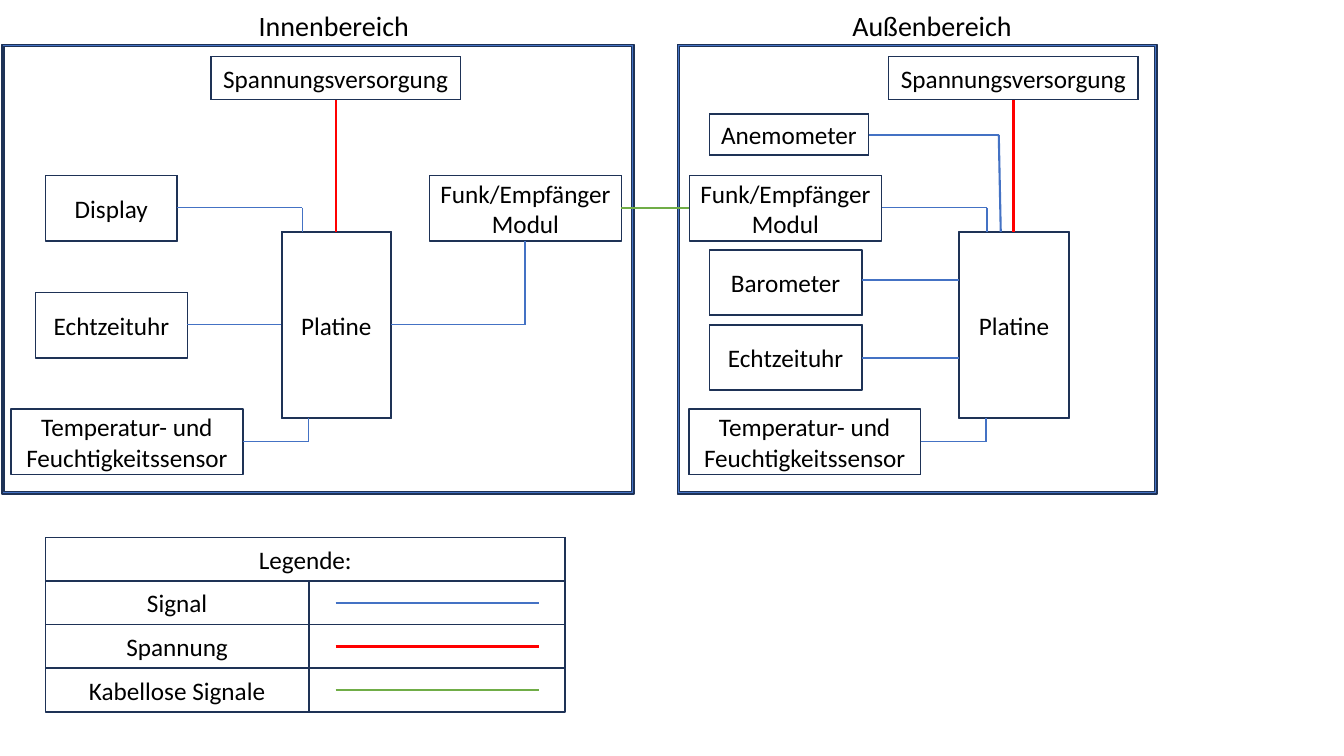
from pptx import Presentation
from pptx.dml.color import RGBColor
from pptx.enum.shapes import MSO_CONNECTOR, MSO_SHAPE
from pptx.enum.text import MSO_ANCHOR, PP_ALIGN
from pptx.oxml.ns import qn
from pptx.util import Cm, Pt
from lxml.etree import SubElement

COLORS = {"signal": "4472C4", "power": "FF0000", "radio": "70AD47",
          "edge": "1E3256", "text": "000000"}


class Board:
    """Holds the style and the current slide."""
    font = "Calibri"

    def __init__(self, slide):
        self.shapes = slide.shapes

    def color(self, name):
        return RGBColor.from_string(COLORS[name])

    def label(self, frame, text, size, align):
        frame.text = text
        for para in frame.paragraphs:
            para.alignment = align
            para.font.name = self.font
            para.font.size = Pt(size)
            para.font.color.rgb = self.color("text")

    def box(self, x, y, w, h, text=""):
        shape = self.shapes.add_shape(MSO_SHAPE.FRAME, Cm(x), Cm(y), Cm(w), Cm(h))
        shape.adjustments[0] = 0.005
        shape.shadow.inherit = False
        shape.fill.solid()
        shape.fill.fore_color.rgb = self.color("signal")
        shape.line.color.rgb = self.color("edge")
        shape.line.width = Pt(1)
        if text:
            shape.text_frame.vertical_anchor = MSO_ANCHOR.MIDDLE
            self.label(shape.text_frame, text, 18, PP_ALIGN.CENTER)

    def wire(self, points, kind="signal", width=1):
        for (x1, y1), (x2, y2) in zip(points, points[1:]):
            line = self.shapes.add_connector(
                MSO_CONNECTOR.STRAIGHT, Cm(x1), Cm(y1), Cm(x2), Cm(y2))
            line.line.color.rgb = self.color(kind)
            line.line.width = Pt(width)
            SubElement(line._element.spPr, qn("a:effectLst"))

    def head(self, x, w, text):
        frame = self.shapes.add_textbox(Cm(x), Cm(0.08), Cm(w), Cm(1.12)).text_frame
        frame.word_wrap = True
        self.label(frame, text, 20, PP_ALIGN.LEFT)


def main():
    prs = Presentation()
    prs.slide_width, prs.slide_height = Cm(33.87), Cm(19.05)
    board = Board(prs.slides.add_slide(prs.slide_layouts[6]))

    # Areas with the parts that both share
    areas = [(0, 0.05, 15.93, 6.27, 4.37, "Innenbereich"),
             (17.08, 17.07, 12.09, 21.23, 4.57, "Außenbereich")]
    for dx, left, width, x, w, title in areas:
        board.box(left, 1.12, width, 11.33)
        board.head(x, w, title)
        board.box(dx + 7.09, 5.84, 2.77, 4.7, "Platine")
        board.box(dx + 0.28, 10.31, 5.84, 1.65, "Temperatur- und Feuchtigkeitssensor")
        board.box(dx + 5.31, 1.42, 6.3, 1.09, "Spannungsversorgung")
        board.wire([(dx + 6.12, 11.13), (dx + 7.77, 11.13), (dx + 7.77, 10.54)])
        board.wire([(dx + 8.46, 2.51), (dx + 8.46, 5.84)], "power", 1.5)

    # Modules of each area
    modules = [
        (1.14, 4.42, 3.33, 1.65, "Display"),
        (0.89, 7.37, 3.84, 1.65, "Echtzeituhr"),
        (10.82, 4.42, 4.85, 1.65, "Funk/Empfänger\nModul"),
        (17.37, 4.42, 4.85, 1.65, "Funk/Empfänger\nModul"),
        (17.88, 2.87, 4.01, 1.04, "Anemometer"),
        (17.88, 6.3, 3.84, 1.65, "Barometer"),
        (17.88, 8.18, 3.84, 1.65, "Echtzeituhr"),
    ]
    for module in modules:
        board.box(*module)

    # Signal wires
    wires = [
        [(4.47, 5.23), (7.62, 5.23), (7.62, 5.84)],
        [(4.72, 8.18), (7.09, 8.18)],
        [(13.23, 6.07), (13.23, 8.18), (9.86, 8.18)],
        [(22.23, 5.23), (24.87, 5.23), (24.87, 5.84)],
        [(21.72, 7.06), (24.16, 7.06)],
        [(21.72, 9.02), (24.16, 9.02)],
    ]
    for points in wires:
        board.wire(points)
    board.wire([(21.89, 3.4), (25.17, 3.4), (25.22, 5.84)], width=1.5)
    board.wire([(15.65, 5.23), (17.37, 5.23)], "radio", 1.5)

    # Legend
    top, row = 13.54, 1.1
    board.box(1.14, top, 13.11, row, "Legende:")
    keys = [("Signal", "signal"), ("Spannung", "power"), ("Kabellose Signale", "radio")]
    for i, (text, kind) in enumerate(keys, 1):
        y = top + i * row
        board.box(1.14, y, 6.65, row, text)
        board.box(7.78, y, 6.46, row)
        board.wire([(8.46, y + row / 2), (13.59, y + row / 2)], kind, 1.5)

    prs.save("out.pptx")


if __name__ == "__main__":
    main()
